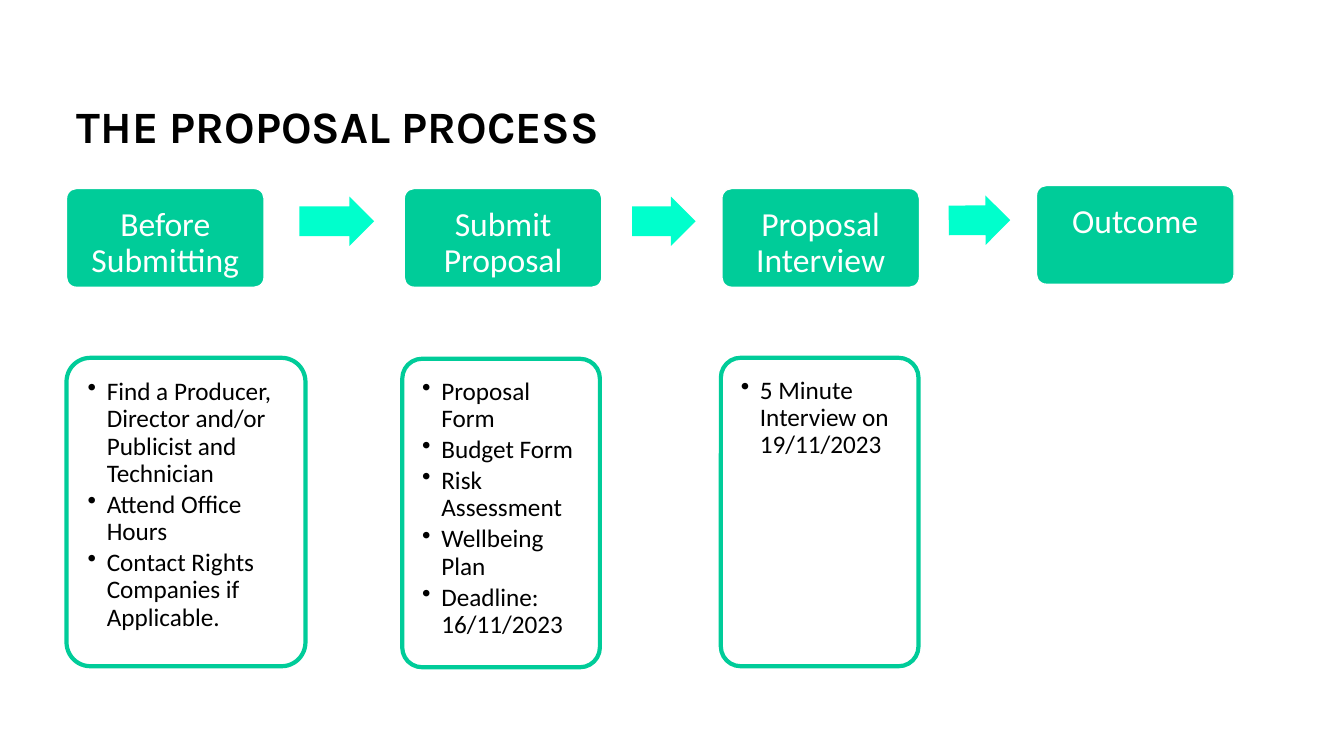
import pptx
import pptx.util
import pptx.dml.color
import pptx.enum.shapes
import pptx.enum.text
import pptx.oxml
import pptx.oxml.ns
from lxml import etree

Inches = pptx.util.Inches
Pt = pptx.util.Pt
SHAPES = pptx.enum.shapes.MSO_SHAPE
ALIGN = pptx.enum.text.PP_ALIGN
ANCHOR = pptx.enum.text.MSO_ANCHOR

GREEN, AQUA, WHITE, BLACK = "00CC99", "00FFCC", "FFFFFF", "000000"
STAGE_WIDTH, STAGE_HEIGHT = 1.96, 0.98
CARD_HEIGHT = 3.06

# Stage name, left, top
STAGES = [
    ("Before Submitting", 0.66, 1.87),
    ("Submit Proposal", 4.01, 1.87),
    ("Proposal Interview", 7.16, 1.87),
    ("Outcome", 10.28, 1.84),
]
# Left, top, width, rotation
ARROWS = [
    (2.97, 1.95, 0.74, 0),
    (6.27, 1.95, 0.63, 0),
    (9.41, 1.94, 0.61, 359.6),
]
# Left, top, width, tasks
CARDS = [
    (0.66, 3.55, 2.37, [
        "Find a Producer, Director and/or Publicist and Technician",
        "Attend Office Hours",
        "Contact Rights Companies if Applicable.",
    ]),
    (3.99, 3.56, 1.96, [
        "Proposal Form",
        "Budget Form",
        "Risk Assessment",
        "Wellbeing Plan",
        "Deadline: 16/11/2023",
    ]),
    (7.15, 3.55, 1.96, ["5 Minute Interview on 19/11/2023"]),
]


def rgb(hex_colour):
    return pptx.dml.color.RGBColor.from_string(hex_colour)


def format_paragraph(paragraph, font, size, colour, align, space_after=0):
    paragraph.alignment = align
    paragraph.line_spacing = 0.9
    paragraph.space_before = Pt(0)
    paragraph.space_after = Pt(space_after)
    for run in paragraph.runs:
        run.font.name = font
        run.font.size = Pt(size)
        run.font.color.rgb = rgb(colour)


def set_frame(frame, left, top, right, bottom):
    frame.word_wrap = True
    frame.vertical_anchor = ANCHOR.TOP
    frame.margin_left, frame.margin_top = Inches(left), Inches(top)
    frame.margin_right, frame.margin_bottom = Inches(right), Inches(bottom)


def add_bullet(paragraph):
    properties = paragraph._p.get_or_add_pPr()
    properties.set("marL", str(Inches(0.19)))
    properties.set("indent", str(-Inches(0.19)))
    bullet = etree.SubElement(properties, pptx.oxml.ns.qn("a:buChar"))
    bullet.set("char", "•")


def set_opacity(shape, percent):
    colour = shape.fill._xPr.find(".//" + pptx.oxml.ns.qn("a:srgbClr"))
    alpha = etree.SubElement(colour, pptx.oxml.ns.qn("a:alpha"))
    alpha.set("val", str(percent * 1000))


def add_block(slide, preset, left, top, width, height, fill, line=None, line_width=1):
    block = slide.shapes.add_shape(
        preset, Inches(left), Inches(top), Inches(width), Inches(height))
    block.shadow.inherit = False
    block.fill.solid()
    block.fill.fore_color.rgb = rgb(fill)
    if line:
        block.line.color.rgb = rgb(line)
        block.line.width = Pt(line_width)
    else:
        block.line.fill.background()
    return block


def add_title(slide, text):
    title = slide.shapes.title
    title.left, title.top = Inches(0.66), Inches(0.55)
    title.width, title.height = Inches(11.5), Inches(1.45)
    frame = title.text_frame
    frame.text = text
    frame.auto_size = pptx.enum.text.MSO_AUTO_SIZE.NONE
    frame.vertical_anchor = ANCHOR.MIDDLE
    format_paragraph(frame.paragraphs[0], "Karla", 32, BLACK, ALIGN.LEFT)
    frame.paragraphs[0].runs[0].font.bold = True


def add_stage(slide, name, left, top):
    stage = add_block(slide, SHAPES.ROUNDED_RECTANGLE, left, top,
                      STAGE_WIDTH, STAGE_HEIGHT, GREEN, WHITE)
    stage.adjustments[0] = 0.1
    set_frame(stage.text_frame, 0.16, 0.16, 0.16, 0)
    stage.text_frame.text = name
    format_paragraph(stage.text_frame.paragraphs[0], "Calibri", 24, WHITE, ALIGN.CENTER)


def add_arrow(slide, left, top, width, rotation):
    arrow = add_block(slide, SHAPES.RIGHT_ARROW, left, top, width, 0.49, AQUA)
    arrow.adjustments[0] = 0.6
    arrow.adjustments[1] = 0.5
    arrow.rotation = rotation


def add_card(slide, left, top, width, tasks):
    card = add_block(slide, SHAPES.ROUNDED_RECTANGLE, left, top,
                     width, CARD_HEIGHT, WHITE, GREEN, 3)
    card.adjustments[0] = 0.1
    set_opacity(card, 90)
    set_frame(card.text_frame, 0.14, 0.14, 0.14, 0.14)
    card.text_frame.text = "\n".join(tasks)
    for paragraph in card.text_frame.paragraphs:
        format_paragraph(paragraph, "Calibri", 18, BLACK, ALIGN.LEFT, 2.7)
        add_bullet(paragraph)


def main():
    presentation = pptx.Presentation()
    presentation.slide_width = Inches(13.33)
    presentation.slide_height = Inches(7.5)
    slide = presentation.slides.add_slide(presentation.slide_layouts[5])

    # Title
    add_title(slide, "THE PROPOSAL PROCESS")

    # Stages of the process and the arrows between them
    for stage in STAGES:
        add_stage(slide, *stage)
    for arrow in ARROWS:
        add_arrow(slide, *arrow)

    # Tasks under each stage
    for card in CARDS:
        add_card(slide, *card)

    presentation.save("out.pptx")


if __name__ == "__main__":
    main()
